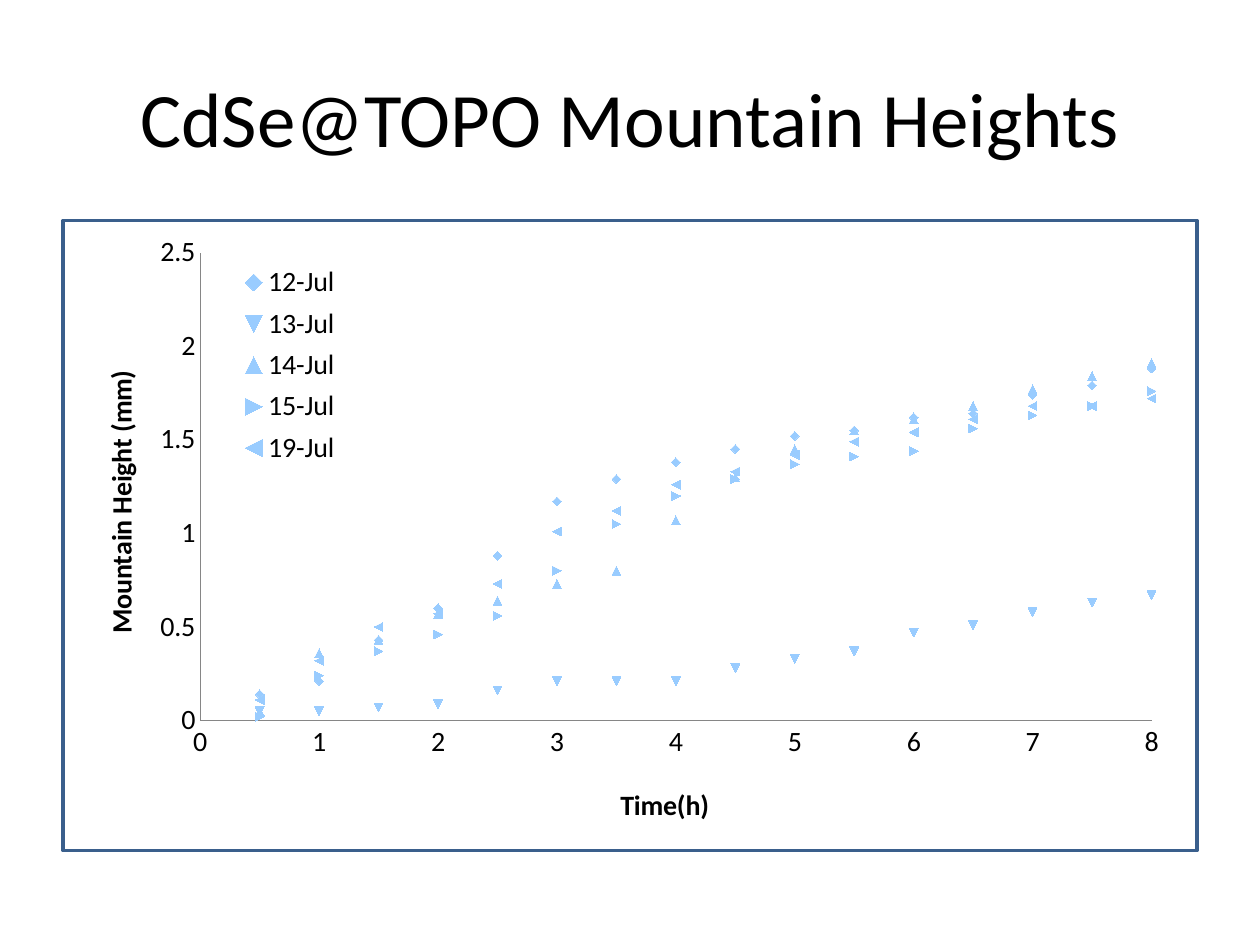
import pptx
import pptx.chart.data
import pptx.dml.color
import pptx.enum.chart
import pptx.enum.shapes
import pptx.enum.text
import pptx.oxml
import pptx.oxml.ns
import pptx.util

FONT = "Calibri"
COLORS = {name: pptx.dml.color.RGBColor.from_string(value) for name, value in {
    "text": "000000", "paper": "FFFFFF", "frame": "3A5F8C",
    "axis": "868686", "marker": "99CCFF"}.items()}
HOURS = [n / 2 for n in range(1, 17)]
HEIGHTS = {
    "12-Jul": [0.14, 0.21, 0.43, 0.6, 0.88, 1.17, 1.29, 1.38,
               1.45, 1.52, 1.55, 1.62, 1.64, 1.74, 1.79, 1.88],
    "13-Jul": [0.05, 0.05, 0.07, 0.09, 0.16, 0.21, 0.21, 0.21,
               0.28, 0.33, 0.37, 0.47, 0.51, 0.58, 0.63, 0.67],
    "14-Jul": [0.05, 0.36, 0.43, 0.57, 0.64, 0.73, 0.8, 1.07,
               1.3, 1.45, 1.55, 1.61, 1.68, 1.77, 1.84, 1.91],
    "15-Jul": [0.02, 0.24, 0.37, 0.46, 0.56, 0.8, 1.05, 1.2,
               1.29, 1.37, 1.41, 1.44, 1.56, 1.63, 1.68, 1.76],
    "19-Jul": [0.11, 0.32, 0.5, 0.57, 0.73, 1.01, 1.12, 1.26,
               1.33, 1.42, 1.49, 1.54, 1.61, 1.68, 1.68, 1.72],
}


def style_font(font, size, bold=False):
    for name, value in {"name": FONT, "size": pptx.util.Pt(size), "bold": bold}.items():
        setattr(font, name, value)
    font.color.rgb = COLORS["text"]


def place(element, before, target=None, **shares):
    """Give a chart part a manual layout in shares of the chart's size."""
    for old in element.findall(pptx.oxml.ns.qn("c:layout")):
        element.remove(old)
    inner = f'<c:layoutTarget val="{target}"/>' if target else ""
    inner += "".join(f'<c:{key}Mode val="edge"/>' for key in "xy")
    inner += "".join(f'<c:{key} val="{value}"/>' for key, value in shares.items())
    layout = pptx.oxml.parse_xml(
        f'<c:layout {pptx.oxml.ns.nsdecls("c")}><c:manualLayout>{inner}'
        '</c:manualLayout></c:layout>')
    element.find(pptx.oxml.ns.qn(before)).addprevious(layout)


prs = pptx.Presentation()
prs.slide_width, prs.slide_height = pptx.util.Inches(10), pptx.util.Inches(7.5)
W, H = prs.slide_width, prs.slide_height
slide = prs.slides.add_slide(prs.slide_layouts[6])

# Title
tf = slide.shapes.add_textbox(
    int(W * 0.05), int(H * 0.04), int(W * 0.9), int(H / 6)).text_frame
tf.word_wrap = True
tf.vertical_anchor = pptx.enum.text.MSO_ANCHOR.MIDDLE
p = tf.paragraphs[0]
p.alignment = pptx.enum.text.PP_ALIGN.CENTER
r = p.add_run()
r.text = "CdSe@TOPO Mountain Heights"
style_font(r.font, 44)

# Frame behind the chart
box = int(W * 0.05), int(H * 7 / 30), int(W * 0.9), int(H * 2 / 3)
frame = slide.shapes.add_shape(pptx.enum.shapes.MSO_SHAPE.RECTANGLE, *box)
frame.shadow.inherit = False
frame.fill.solid()
frame.fill.fore_color.rgb = COLORS["paper"]
frame.line.color.rgb = COLORS["frame"]
frame.line.width = pptx.util.Pt(2)

# Scatter chart
data = pptx.chart.data.XyChartData()
for day, heights in HEIGHTS.items():
    series = data.add_series(day)
    for hour, height in zip(HOURS, heights):
        series.add_data_point(hour, height)
chart = slide.shapes.add_chart(
    pptx.enum.chart.XL_CHART_TYPE.XY_SCATTER, *box, data).chart
style_font(chart.font, 10)
chart.has_title = False
plot = chart.plots[0]
plot.vary_by_categories = False
for number, series in enumerate(plot.series, 1):
    series.smooth = False
    series.format.line.fill.background()
    series.marker.format.fill.solid()
    series.marker.format.fill.fore_color.rgb = COLORS["marker"]
    series.marker.format.line.fill.background()
    # Automatic marker shapes follow the series index; start after the square
    series._element.find(pptx.oxml.ns.qn("c:idx")).set("val", str(number))
place(chart._chartSpace.chart.plotArea, "c:scatterChart", "inner",
      x=0.121, y=0.051, w=0.839, h=0.743)

# Axes: title, maximum, step, title position
for axis, title, top, step, x, y in (
        (chart.category_axis, "Time(h)", 8, 1, 0.487, 0.89),
        (chart.value_axis, "Mountain Height (mm)", 2.5, 0.5, 0.03, 0.23)):
    for name, value in {
            "minimum_scale": 0, "maximum_scale": top, "major_unit": step,
            "has_major_gridlines": False,
            "major_tick_mark": pptx.enum.chart.XL_TICK_MARK.NONE,
            "minor_tick_mark": pptx.enum.chart.XL_TICK_MARK.NONE}.items():
        setattr(axis, name, value)
    axis.tick_labels.number_format = "General"
    axis.tick_labels.number_format_is_linked = False
    style_font(axis.tick_labels.font, 16)
    axis.format.line.color.rgb = COLORS["axis"]
    p = axis.axis_title.text_frame.paragraphs[0]
    r = p.add_run()
    r.text = title
    style_font(r.font, 16, bold=True)
    place(axis.axis_title._element, "c:overlay", x=x, y=y)

# Legend over the empty corner of the plot
chart.has_legend = True
legend = chart.legend
legend.position = pptx.enum.chart.XL_LEGEND_POSITION.RIGHT
legend.include_in_layout = False
style_font(legend.font, 16)
place(legend._element, "c:overlay", x=0.15, y=0.06, w=0.1, h=0.34)

prs.save("out.pptx")
